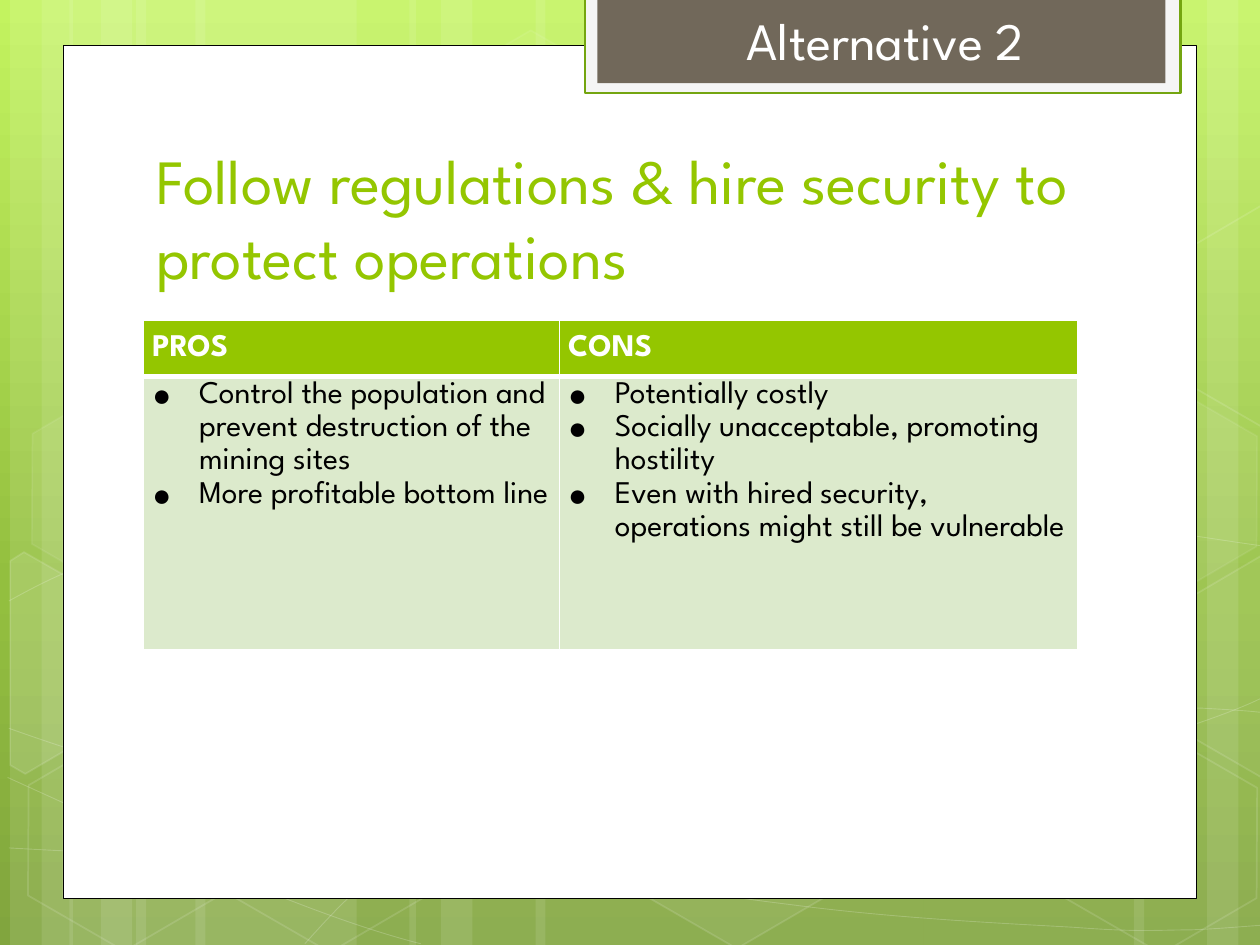
"""Build the Alternative 2 slide with its pros and cons table."""
from copy import deepcopy
from dataclasses import dataclass
from math import cos, radians, sin

from lxml import etree
from pptx import Presentation
from pptx import util as u
from pptx.dml.color import RGBColor
from pptx.enum import shapes, text
from pptx.oxml.ns import qn


@dataclass(frozen=True)
class Theme:
    font: str = "League Spartan"
    title: int = 36
    label: int = 30
    cell: int = 18
    white: str = "FFFFFF"
    black: str = "000000"
    lime: str = "94C600"
    pale: str = "DCEACC"
    brown: str = "71685A"
    frame: str = "F5F5F5"
    edge: str = "74A510"
    sky: tuple = ((0, "C3F35F"), (0.62, "93BF3F"), (1, "81A53E"))


TILT = 30
BANDS = [(1.08, 1.75), (0.08, 0.5), (0.33, 0.83), (1.55, 1.75), (0.55, 0.5), (0.8, 0.83),
         (7.33, 1.75), (9.58, 0.5), (9, 0.83), (4.25, 3.08), (3.25, 0.5), (3.5, 0.83)]
CURVES = [
    [(0.07, 6.73), (0.61, 6.76), (1.15, 6.79), (1.9, 6.78), (2.65, 6.77), (3.58, 6.75), (4.58, 6.65),
     (5.58, 6.55), (7, 6.36), (7.92, 6.17), (8.83, 5.98), (9.77, 5.68), (10.07, 5.51)],
    [(0.07, 4.77), (0.36, 4.61), (0.65, 4.46), (1.21, 4.31), (1.78, 4.16), (2.59, 3.94), (3.47, 3.87),
     (4.36, 3.8), (5.44, 3.79), (6.54, 3.87), (7.64, 3.95), (9.47, 4.26), (10.07, 4.34)],
    [(0.06, 6.17), (1.27, 6.72), (2.47, 7.27), (3.34, 7.49)],
    [(0.07, 5.78), (0.38, 5.89), (0.7, 6), (1.28, 6.16), (1.86, 6.31), (2.73, 6.56), (3.57, 6.73),
     (4.4, 6.9), (5.45, 7.08), (6.28, 7.18), (7.11, 7.29), (8, 7.33), (8.53, 7.36),
     (9.05, 7.4), (9.19, 7.38), (9.45, 7.38), (9.71, 7.37), (9.89, 7.35), (10.07, 7.34)],
    [(2.42, 7.49), (2.6, 7.29), (2.78, 7.09), (3.02, 6.91), (3.26, 6.73), (3.6, 6.53), (3.88, 6.39),
     (4.16, 6.25), (4.33, 6.19), (4.7, 6.09), (5.06, 5.99), (5.73, 5.85), (6.08, 5.78),
     (6.44, 5.71), (6.49, 5.71), (6.8, 5.69), (7.11, 5.66), (7.6, 5.63), (7.94, 5.62),
     (8.29, 5.61), (8.86, 5.62), (8.86, 5.62), (9.08, 5.62), (9.31, 5.62), (9.53, 5.62),
     (9.71, 5.63), (9.88, 5.64), (9.97, 5.65), (10.06, 5.66), (10.03, 5.65), (10.06, 5.66)],
]
HEXES = [(3.34, 0.36, 4, 8), (4.97, 5.89, 6, 12), (0.11, 5.91, 0, 12), (0.14, 3.12, 7, 8),
         (1.74, 5.92, 0, 12), (7.53, 4.53, 10, 12), (8.34, 5.93, 0, 12), (8.34, 3.14, 7, 8)]
CUTS = [
    ([(0.08, 4.45), (0.19, 4.38), (0.96, 4.82), (0.95, 5.7), (0.2, 6.14), (0.08, 6.07)], (0.36, 5.35), 10),
    ([(9.26, 4.85), (10.01, 4.41), (10.09, 4.46), (10.09, 6.13), (10.02, 6.17), (9.26, 5.73)], (9.85, 5.2), 4),
    ([(9.26, 2.07), (10.01, 1.63), (10.1, 1.68), (10.09, 3.35), (10.02, 3.39), (9.26, 2.95)], (9.85, 2.41), 0),
]
TABLE = {
    "PROS": ["Control the population and prevent destruction of the mining sites", "More profitable bottom line"],
    "CONS": ["Potentially costly", "Socially unacceptable, promoting hostility",
             "Even with hired security, operations might still be vulnerable"],
}


def fade(node, part):
    """Set the opacity of the first colour in a node, in percent."""
    etree.SubElement(next(node.iter(qn("a:srgbClr"))), qn("a:alpha"), val=str(part * 1000))


def turn(points, mid, angle):
    """Rotate points about a middle point."""
    c, s = cos(radians(angle)), sin(radians(angle))
    gaps = [(x - mid[0], y - mid[1]) for x, y in points]
    return [(mid[0] + x * c - y * s, mid[1] + x * s + y * c) for x, y in gaps]


class Deck:
    """Hold the theme and the current slide."""

    def __init__(self, theme):
        self.theme = theme
        self.deck = Presentation()
        self.deck.slide_width, self.deck.slide_height = u.Inches(10), u.Inches(7.5)
        self.slide = self.deck.slides.add_slide(self.deck.slide_layouts[1])

    def sky(self):
        """Fill the background with the vertical gradient."""
        fill = self.slide.background.fill
        fill.gradient()
        fill.gradient_angle = 270
        first = fill.gradient_stops[0]._gs
        first.addnext(deepcopy(first))
        for stop, (place, tint) in zip(fill.gradient_stops, self.theme.sky):
            stop.position, stop.color.rgb = place, RGBColor.from_string(tint)

    def paint(self, shape, fill=None, line=None, width=1, clear=100, faint=100):
        """Style the fill and line of a shape."""
        shape.shadow.inherit = False
        props = shape._element.spPr
        shape.fill.background()
        shape.line.fill.background()
        if fill and clear:
            shape.fill.solid()
            shape.fill.fore_color.rgb = RGBColor.from_string(fill)
            if clear < 100:
                fade(props.find(qn("a:solidFill")), clear)
        if line:
            shape.line.color.rgb = RGBColor.from_string(line)
            shape.line.width = u.Pt(width)
            if faint < 100:
                fade(props.find(qn("a:ln")), faint)

    def box(self, place, kind=shapes.MSO_SHAPE.RECTANGLE, **style):
        """Add a preset shape."""
        shape = self.slide.shapes.add_shape(kind, *map(u.Inches, place))
        self.paint(shape, **style)
        return shape

    def hexa(self, x, y, clear, faint):
        """Add a tilted hexagon."""
        shape = self.box((x, y, 1.75, 1.52), shapes.MSO_SHAPE.HEXAGON, fill=self.theme.white,
                         line=self.theme.white, clear=clear, faint=faint)
        shape.adjustments[0] = 0.285
        shape.rotation = TILT

    def outline(self, points, close, **style):
        """Add a freeform through the given points."""
        spots = [(u.Inches(x), u.Inches(y)) for x, y in points]
        pen = self.slide.shapes.build_freeform(*spots[0])
        pen.add_line_segments(spots[1:], close=close)
        shape = pen.convert_to_shape()
        self.paint(shape, line=self.theme.white, **style)
        return shape

    def curve(self, points):
        """Add an open chain of cubic curves."""
        shape = self.outline(points, False, width=0.5, faint=20)
        route = next(shape._element.iter(qn("a:path")))
        lines = route.findall(qn("a:lnTo"))
        for i in range(0, len(lines), 3):
            bend = etree.SubElement(route, qn("a:cubicBezTo"))
            for line in lines[i:i + 3]:
                bend.append(line[0])
                route.remove(line)

    def font(self, para, size, tint, bold=False):
        """Format the runs of a paragraph."""
        for run in para.runs:
            run.font.name, run.font.size, run.font.bold = self.theme.font, u.Pt(size), bold
            run.font.color.rgb = RGBColor.from_string(tint)

    def holder(self, index, words, place, size, tint, anchor, align):
        """Fill a placeholder and bring it to the front."""
        shape = self.slide.placeholders[index]
        shape.left, shape.top, shape.width, shape.height = map(u.Inches, place)
        self.slide.shapes._spTree.append(shape._element)
        frame = shape.text_frame
        frame.text = words
        frame.auto_size, frame.vertical_anchor = text.MSO_AUTO_SIZE.NONE, anchor
        para = frame.paragraphs[0]
        para.alignment, para.space_before = align, u.Pt(0)
        if index:
            self.bullet(para, 0.07, 0)
        self.font(para, size, tint)

    def bullet(self, para, left, hang, mark=None):
        """Set the indent and bullet of a paragraph."""
        props = para._p.get_or_add_pPr()
        props.set("marL", str(u.Inches(left)))
        props.set("indent", str(u.Inches(hang)))
        if mark:
            etree.SubElement(props, qn("a:buFont"), typeface="Arial")
            etree.SubElement(props, qn("a:buChar"), char=mark)
        else:
            etree.SubElement(props, qn("a:buNone"))

    def cell(self, cell, lines, fill, tint, head):
        """Fill and format a table cell."""
        cell.margin_left = cell.margin_right = u.Inches(0.07)
        cell.margin_top = cell.margin_bottom = 0
        cell.fill.solid()
        cell.fill.fore_color.rgb = RGBColor.from_string(fill)
        cell.text_frame.text = "\n".join(lines)
        for para in cell.text_frame.paragraphs:
            para.line_spacing = 1.5 if head else 1.15
            if not head:
                self.bullet(para, 0.37, -0.37, "●")
            self.font(para, self.theme.cell, tint, head)
        thick = "B" if head else "T"
        for spot, side in enumerate("LRTB"):
            line = etree.Element(qn(f"a:ln{side}"), w=str(u.Pt(3 if side == thick else 1)))
            etree.SubElement(etree.SubElement(line, qn("a:solidFill")), qn("a:srgbClr"), val=self.theme.white)
            cell._tc.get_or_add_tcPr().insert(spot, line)

    def table(self, data, place, cols, rows):
        """Add a table with one column for each heading."""
        grid, look = self.slide.shapes.add_table(2, len(data), *map(u.Inches, place)).table, self.theme
        for row, high in zip(grid.rows, rows):
            row.height = u.Inches(high)
        for i, (head, items) in enumerate(data.items()):
            grid.columns[i].width = u.Inches(cols[i])
            self.cell(grid.cell(0, i), [head], look.lime, look.white, True)
            self.cell(grid.cell(1, i), items, look.pale, look.black, False)


look = Theme()
deck = Deck(look)
deck.sky()
for left, wide in BANDS:
    deck.box((left, 0, wide, 7.5), fill=look.white, clear=10)
for points in CURVES:
    deck.curve(points)
for spot in HEXES:
    deck.hexa(*spot)
for points, mid, clear in CUTS:
    deck.outline(turn(points, mid, -TILT), True, fill=look.white, clear=clear, faint=12).rotation = TILT
deck.box((0.5, 0.36, 9, 6.77), fill=look.white, line=look.black, width=0.5)
deck.box((4.64, -0.02, 4.73, 0.76), fill=look.frame, line=look.edge, width=1.25)
deck.box((4.74, -0.02, 4.51, 0.68), fill=look.brown)
deck.table(TABLE, (1.14, 2.54, 7.41, 2.62), (3.3, 4.11), (0.45, 2.17))
deck.holder(0, "Follow regulations & hire security to protect operations", (1.14, 1.12, 7.68, 1.25),
            look.title, look.lime, text.MSO_ANCHOR.BOTTOM, text.PP_ALIGN.LEFT)
deck.holder(1, "Alternative 2", (4.74, -0.02, 4.51, 0.66), look.label, look.white,
            text.MSO_ANCHOR.MIDDLE, text.PP_ALIGN.CENTER)
deck.deck.save("out.pptx")
